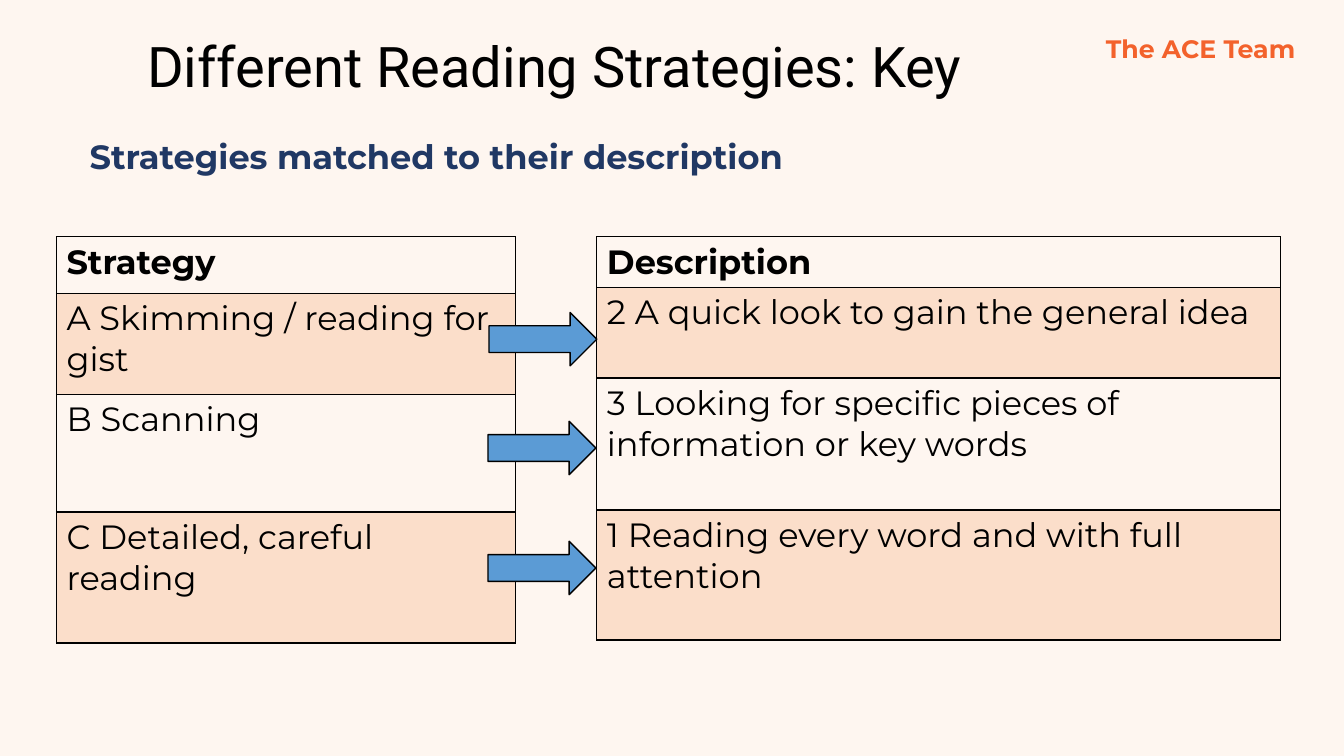
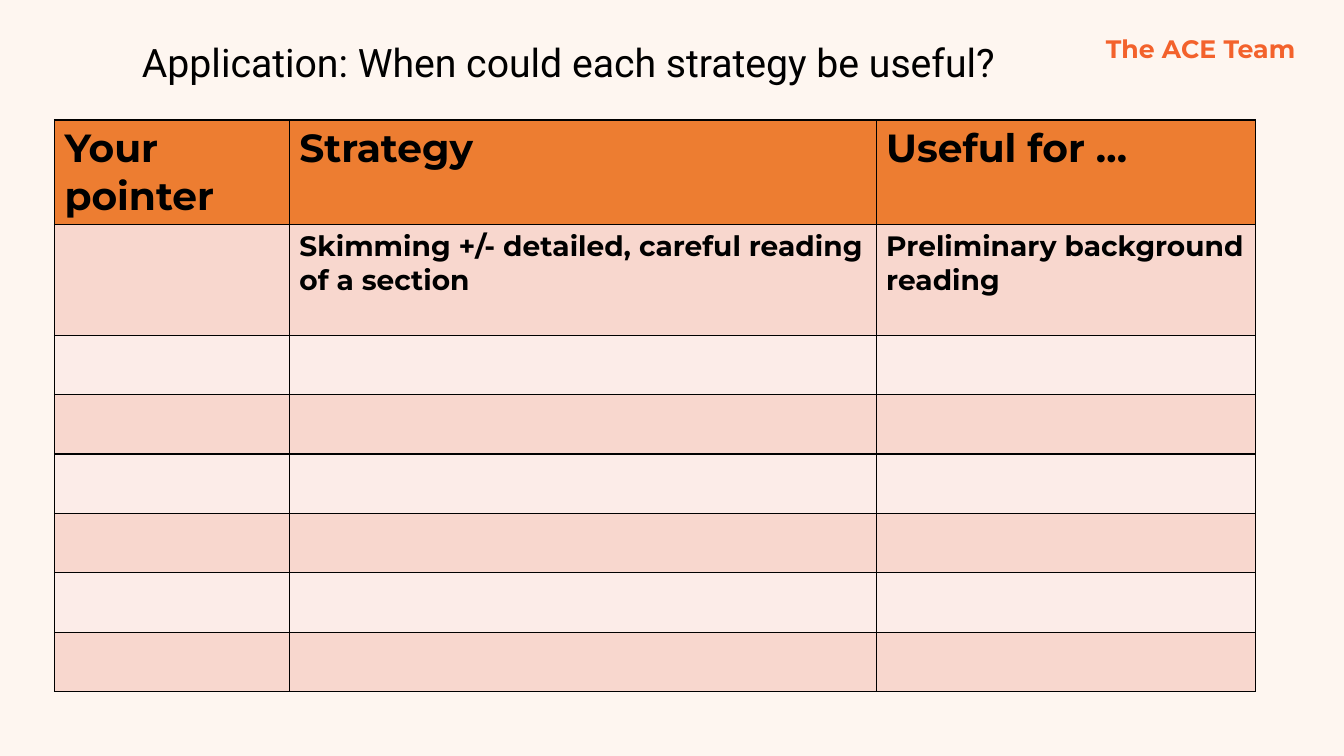
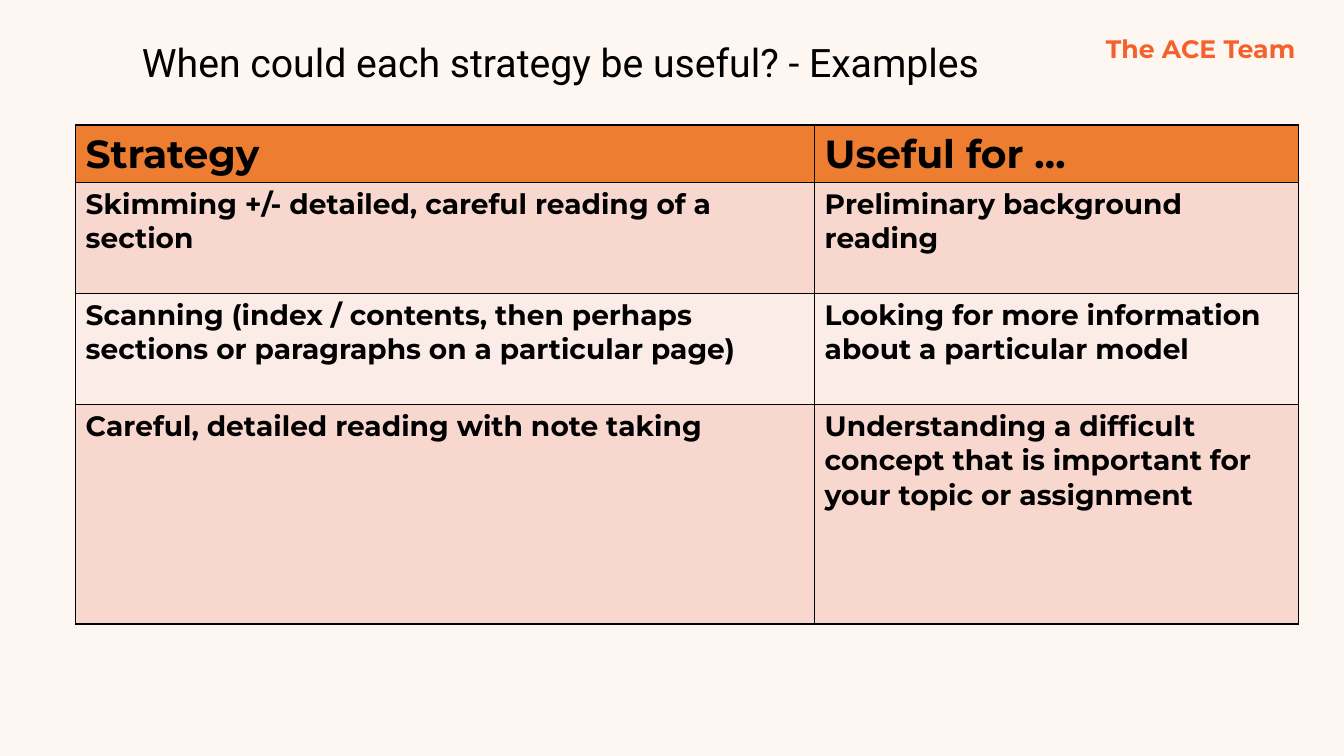
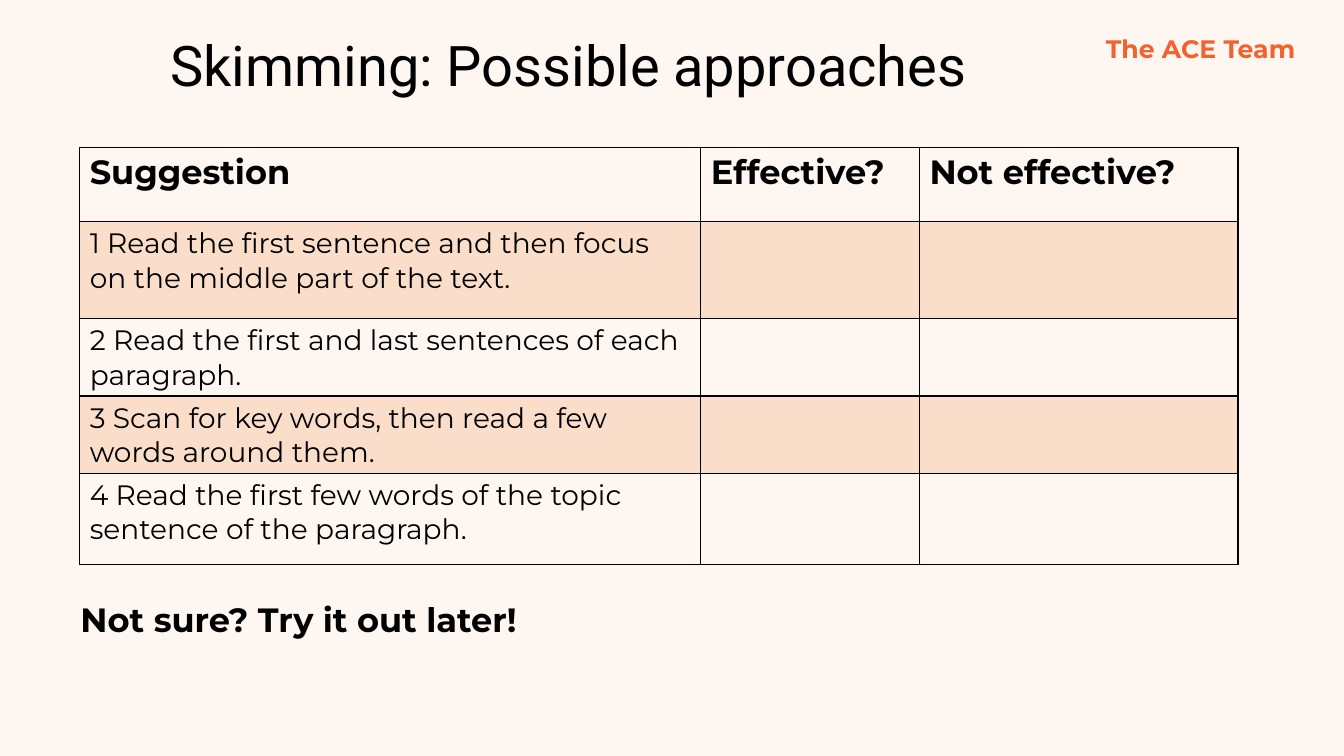
from lxml import etree
from pptx import Presentation
from pptx import util as u
from pptx.dml.color import RGBColor
from pptx.enum import shapes, text
from pptx.oxml.ns import qn

# Shared look
BLACK, NAVY, ORANGE, CORAL, BLUE = "000000", "203864", "ED7D31", "F3622C", "5B9BD5"
PAPER, PEACH, PINK, PALE_PINK = "FEF6F0", "FBDECA", "F8D7CE", "FCECE8"
BODY, HEADING = "Montserrat", "Roboto"
TEAM = dict(words="The ACE Team", at=(10.87, 0.28, 2.12, 0.4), size=18, color=CORAL, wrap=False)
PEACH_BANDS = dict(head_fill=None, bands=(PEACH, None), head_size=24)
PINK_BANDS = dict(head_fill=ORANGE, bands=(PINK, PALE_PINK), head_size=28,
                  body_size=20, body_bold=True)
SUBTITLE_STYLE = dict(size=28, at=(1.31, 0.33, 9.56, 0.57), middle=False)

# Content: one entry per slide
SKIMMING = ("Skimming +/- detailed, careful reading of a section", "Preliminary background reading")
SLIDES = [
    dict(
        title=dict(words="Different Reading Strategies: Key", at=(1.36, 0.35, 9.51, 0.6)),
        notes=[dict(words="Strategies matched to their description",
                    at=(0.79, 1.3, 11.59, 0.5), color=NAVY)],
        tables=[
            dict(PEACH_BANDS, body_size=24, corner=(0.56, 2.35), columns=[4.55],
                 heights=[0.56, 1, 1.17, 1.3],
                 rows=[["Strategy"], ["A Skimming / reading for gist"], ["B Scanning"],
                       ["C Detailed, careful reading"]]),
            dict(PEACH_BANDS, body_size=24, corner=(5.92, 2.35), columns=[6.78],
                 heights=[0.5, 0.9, 1.31, 1.29],
                 rows=[["Description"], ["2 A quick look to gain the general idea"],
                       ["3 Looking for specific pieces of information or key words"],
                       ["1 Reading every word and with full attention"]]),
        ],
        arrows=[(4.85, 3.1), (4.84, 4.18), (4.84, 5.37)],
    ),
    dict(
        title=dict(SUBTITLE_STYLE, words="Application: When could each strategy be useful?"),
        tables=[
            dict(PINK_BANDS, corner=(0.54, 1.19), columns=[2.33, 5.82, 3.76],
                 heights=[1.03, 1.1] + [0.59] * 6,
                 rows=[["Your pointer", "Strategy", "Useful for …"], ["", *SKIMMING]]
                 + [[""] * 3] * 6),
        ],
    ),
    dict(
        title=dict(SUBTITLE_STYLE, words="When could each strategy be useful? - Examples"),
        tables=[
            dict(PINK_BANDS, corner=(0.75, 1.24), columns=[7.33, 4.8],
                 heights=[0.57, 1.1, 1.1, 2.18],
                 rows=[["Strategy", "Useful for …"], SKIMMING,
                       ["Scanning (index / contents, then perhaps sections or paragraphs"
                        " on a particular page)",
                        "Looking for more information about a particular model"],
                       ["Careful, detailed reading with note taking",
                        "Understanding a difficult concept that is important for your topic"
                        " or assignment"]]),
        ],
    ),
    dict(
        title=dict(words="Skimming: Possible approaches", at=(1.59, 0.18, 9.14, 0.92)),
        notes=[dict(words="Not sure? Try it out later!", at=(0.7, 5.89, 11.57, 0.5))],
        tables=[
            dict(PEACH_BANDS, body_size=20, corner=(0.79, 1.46), columns=[6.16, 2.17, 3.16],
                 heights=[0.74, 0.96, 0.77, 0.76, 0.9],
                 rows=[["Suggestion", "Effective?", "Not effective?"],
                       ["1 Read the first sentence and then focus on the middle part of the text.",
                        "", ""],
                       ["2 Read the first and last sentences of each paragraph.", "", ""],
                       ["3 Scan for key words, then read a few words around them.", "", ""],
                       ["4 Read the first few words of the topic sentence of the paragraph.",
                        "", ""]]),
        ],
    ),
]


def rgb(color):
    return RGBColor.from_string(color)


def inches(values):
    return [u.Inches(value) for value in values]


def write(frame, words, size, color=BLACK, bold=True, font=BODY):
    span = frame.paragraphs[0].add_run()
    span.text = words
    for name, value in dict(size=u.Pt(size), name=font, bold=bold).items():
        setattr(span.font, name, value)
    span.font.color.rgb = rgb(color)


def add_text(page, words, at, size=24, wrap=True, middle=False, **style):
    frame = page.shapes.add_textbox(*inches(at)).text_frame
    frame.word_wrap = wrap
    frame.vertical_anchor = text.MSO_ANCHOR.MIDDLE if middle else text.MSO_ANCHOR.TOP
    write(frame, words, size, **style)


def paint_cell(cell, color):
    # Borders come before the fill in the cell properties
    properties = cell._tc.get_or_add_tcPr()
    for side in ("a:lnL", "a:lnR", "a:lnT", "a:lnB"):
        line = etree.SubElement(properties, qn(side), w=str(u.Pt(1)))
        solid = etree.SubElement(line, qn("a:solidFill"))
        etree.SubElement(solid, qn("a:srgbClr"), val=BLACK)
    if color:
        cell.fill.solid()
        cell.fill.fore_color.rgb = rgb(color)
    else:
        cell.fill.background()


def add_grid(page, corner, columns, heights, rows, head_fill, bands,
             head_size, body_size, body_bold=False):
    size = (sum(columns), sum(heights))
    table = page.shapes.add_table(len(rows), len(columns), *inches(corner + size)).table
    table.first_row = table.horz_banding = False
    for column, width in zip(table.columns, columns):
        column.width = u.Inches(width)
    for index, (row, height, entries) in enumerate(zip(table.rows, heights, rows)):
        row.height = u.Inches(height)
        head = index == 0
        for cell, words in zip(row.cells, entries):
            paint_cell(cell, head_fill if head else bands[(index - 1) % 2])
            if words:
                write(cell.text_frame, words, head_size if head else body_size,
                      bold=head or body_bold)


def add_arrow(page, left, top):
    arrow = page.shapes.add_shape(shapes.MSO_SHAPE.RIGHT_ARROW, *inches((left, top, 1.07, 0.53)))
    arrow.shadow.inherit = False
    arrow.fill.solid()
    arrow.fill.fore_color.rgb = rgb(BLUE)
    arrow.line.color.rgb = rgb(BLACK)
    arrow.line.width = u.Pt(1)


def main():
    deck = Presentation()
    deck.slide_width, deck.slide_height = inches((13.33, 7.5))
    backdrop = deck.slide_master.background.fill
    backdrop.solid()
    backdrop.fore_color.rgb = rgb(PAPER)
    for content in SLIDES:
        page = deck.slides.add_slide(deck.slide_layouts[6])
        title = dict(size=40, middle=True, bold=False, font=HEADING) | content["title"]
        for item in [title, TEAM, *content.get("notes", [])]:
            add_text(page, **item)
        for grid in content["tables"]:
            add_grid(page, **grid)
        for left, top in content.get("arrows", []):
            add_arrow(page, left, top)
    deck.save("out.pptx")


if __name__ == "__main__":
    main()
